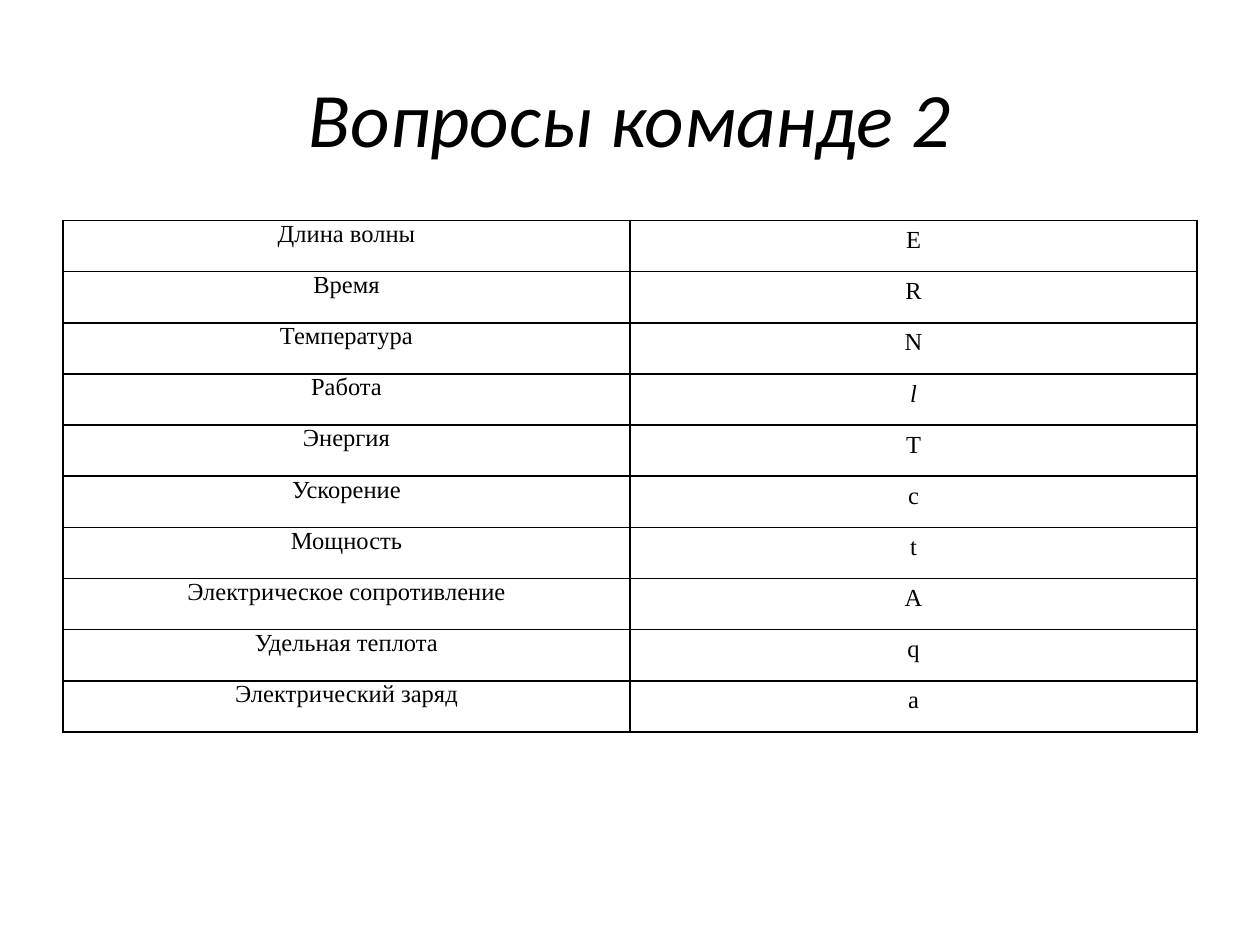
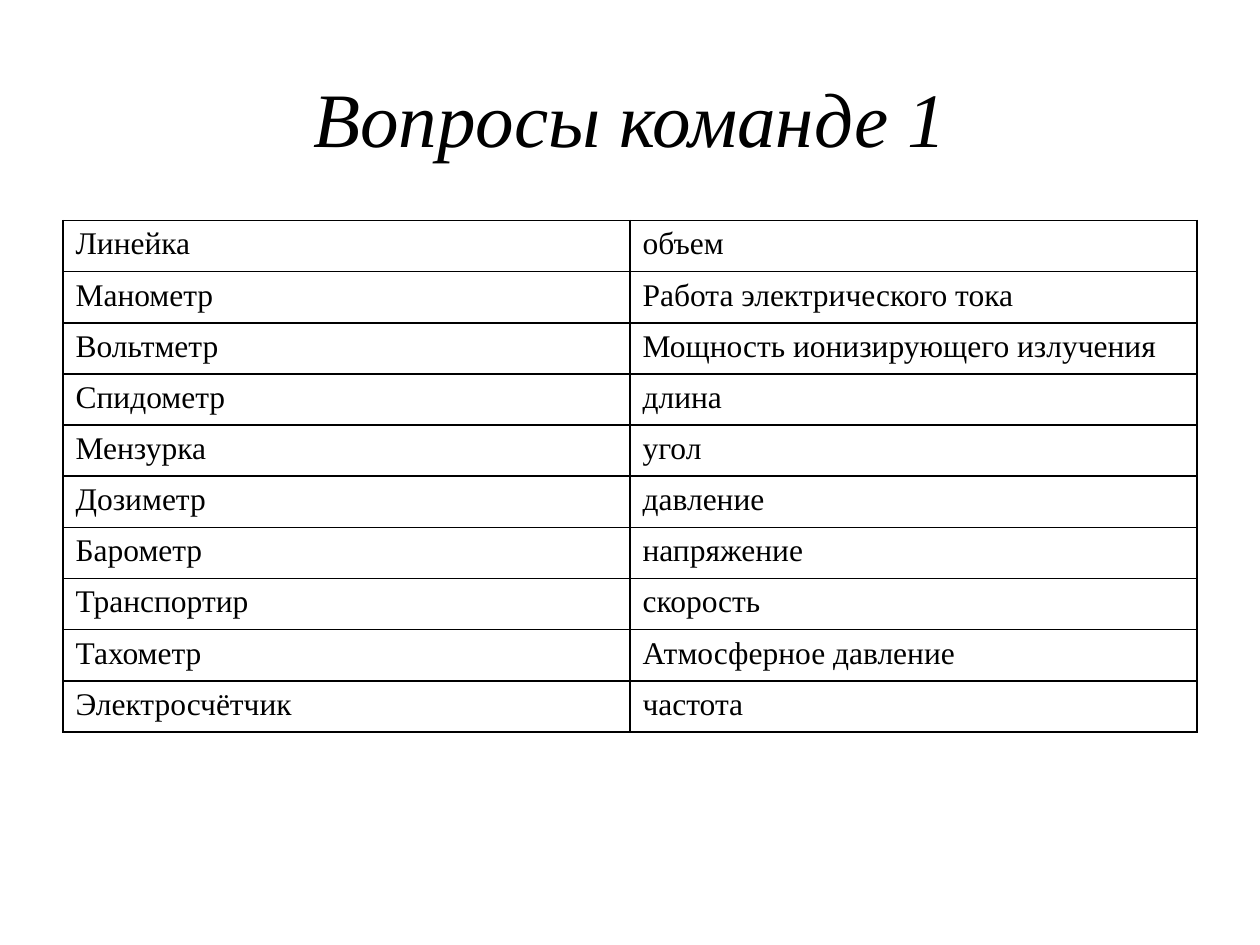
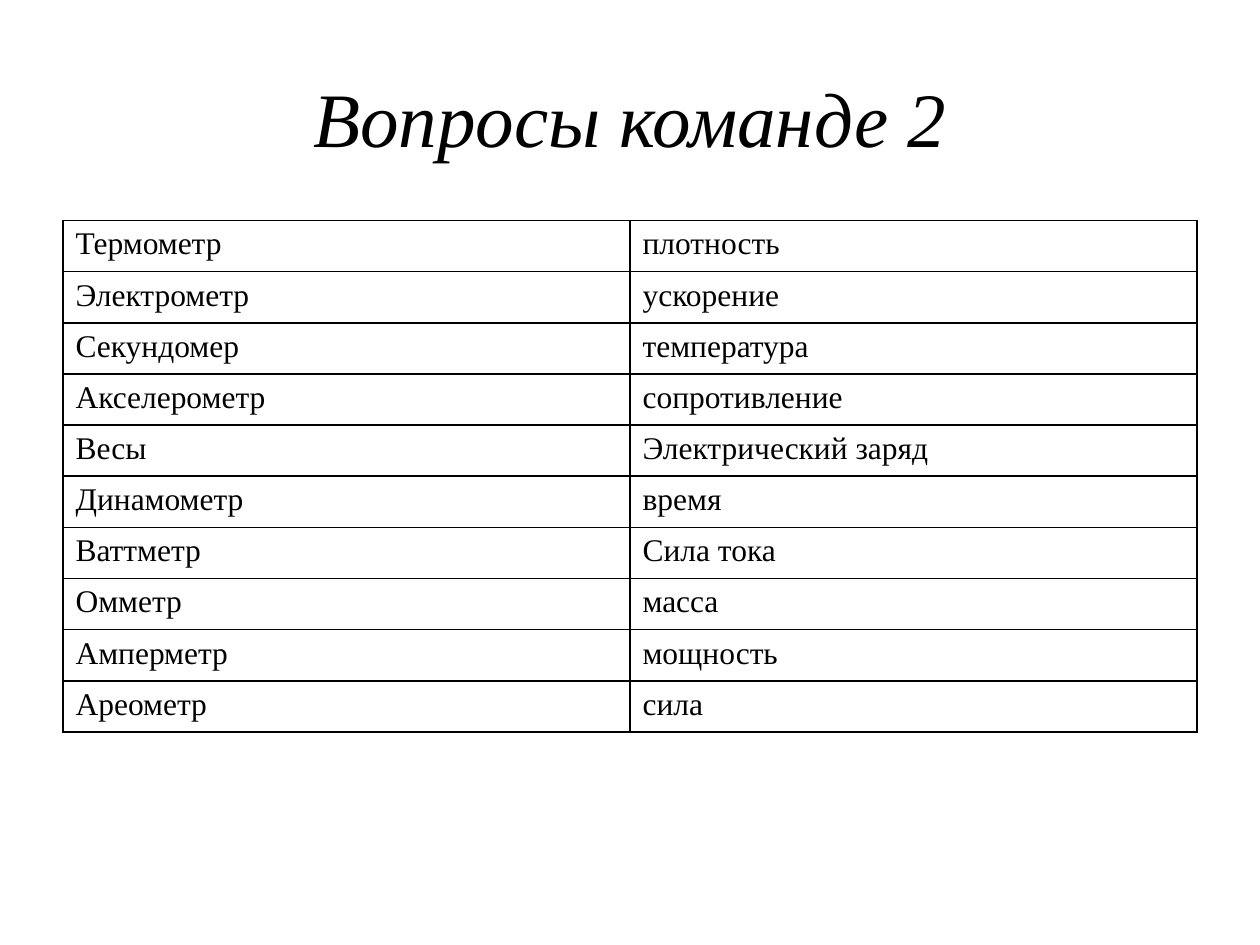
from lxml import etree
from pptx import Presentation
from pptx.dml.color import RGBColor
from pptx.enum.text import MSO_ANCHOR, PP_ALIGN
from pptx.oxml.ns import qn
from pptx.util import Inches, Pt

LEFT, CENTER = PP_ALIGN.LEFT, PP_ALIGN.CENTER
MIDDLE = MSO_ANCHOR.MIDDLE

SANS, SERIF = "Calibri", "Times New Roman"
BLACK = "000000"
TITLE_ONLY_LAYOUT = 5
MARGIN, CONTENT_WIDTH = 0.5, 9
TITLE_TOP, TITLE_HEIGHT, TITLE_SIZE = 0.3, 1.25, 44
TABLE_TOP, TABLE_HEIGHT = 1.75, 4.06
BORDER_WIDTH = Pt(1)

QUANTITIES_AND_SYMBOLS = [
    ("Длина волны", "E"),
    ("Время", "R"),
    ("Температура", "N"),
    ("Работа", "l"),
    ("Энергия", "T"),
    ("Ускорение", "с"),
    ("Мощность", "t"),
    ("Электрическое сопротивление", "А"),
    ("Удельная теплота", "q"),
    ("Электрический заряд", "a"),
]
ITALIC_SYMBOLS = {"l"}

TEAM_1_INSTRUMENTS = [
    ("Линейка", "объем"),
    ("Манометр", "Работа электрического тока"),
    ("Вольтметр", "Мощность ионизирующего излучения"),
    ("Спидометр", "длина"),
    ("Мензурка", "угол"),
    ("Дозиметр", "давление"),
    ("Барометр", "напряжение"),
    ("Транспортир", "скорость"),
    ("Тахометр", "Атмосферное давление"),
    ("Электросчётчик", "частота"),
]

TEAM_2_INSTRUMENTS = [
    ("Термометр", "плотность"),
    ("Электрометр", "ускорение"),
    ("Секундомер", "температура"),
    ("Акселерометр", "сопротивление"),
    ("Весы", "Электрический заряд"),
    ("Динамометр", "время"),
    ("Ваттметр", "Сила тока"),
    ("Омметр", "масса"),
    ("Амперметр", "мощность"),
    ("Ареометр", "сила"),
]

SYMBOL_STYLE = {"size": 14, "alignment": CENTER, "tight_first_column": True}
INSTRUMENT_STYLE = {"size": 18, "alignment": LEFT, "tight_first_column": False}

SLIDES = [
    ("Вопросы команде 2", SANS, QUANTITIES_AND_SYMBOLS, SYMBOL_STYLE),
    ("Вопросы команде 1", SERIF, TEAM_1_INSTRUMENTS, INSTRUMENT_STYLE),
    ("Вопросы команде 2", SERIF, TEAM_2_INSTRUMENTS, INSTRUMENT_STYLE),
]


def color(hex_value):
    return RGBColor.from_string(hex_value)


def write_text(text_frame, text, font_name, size, alignment, italic=False):
    paragraph = text_frame.paragraphs[0]
    paragraph.alignment = alignment
    run = paragraph.add_run()
    run.text = text
    run.font.name = font_name
    run.font.size = Pt(size)
    run.font.italic = italic
    run.font.color.rgb = color(BLACK)


def add_title(slide, text, font_name):
    title = slide.shapes.title
    title.left, title.top = Inches(MARGIN), Inches(TITLE_TOP)
    title.width, title.height = Inches(CONTENT_WIDTH), Inches(TITLE_HEIGHT)
    title.text_frame.vertical_anchor = MIDDLE
    write_text(title.text_frame, text, font_name, TITLE_SIZE, CENTER, italic=True)


def set_borders(cell):
    properties = cell._tc.get_or_add_tcPr()
    for side in ("lnL", "lnR", "lnT", "lnB"):
        line = etree.SubElement(properties, qn(f"a:{side}"), w=str(BORDER_WIDTH))
        fill = etree.SubElement(line, qn("a:solidFill"))
        etree.SubElement(fill, qn("a:srgbClr"), val=BLACK)


def add_pairs_table(slide, pairs, size, alignment, tight_first_column):
    """Add a two-column grid; a tight first column has no top or bottom margin."""
    table = slide.shapes.add_table(
        len(pairs), 2, Inches(MARGIN), Inches(TABLE_TOP),
        Inches(CONTENT_WIDTH), Inches(TABLE_HEIGHT),
    ).table
    table.first_row = table.horz_banding = False
    for row_index, pair in enumerate(pairs):
        for column_index, text in enumerate(pair):
            cell = table.cell(row_index, column_index)
            set_borders(cell)
            cell.fill.background()
            if tight_first_column and column_index == 0:
                cell.margin_left = cell.margin_right = Inches(0.07)
                cell.margin_top = cell.margin_bottom = 0
            write_text(cell.text_frame, text, SERIF, size, alignment,
                       italic=text in ITALIC_SYMBOLS)


def main():
    presentation = Presentation()
    presentation.slide_width, presentation.slide_height = Inches(10), Inches(7.5)
    layout = presentation.slide_layouts[TITLE_ONLY_LAYOUT]
    for title, title_font, pairs, style in SLIDES:
        slide = presentation.slides.add_slide(layout)
        add_title(slide, title, title_font)
        add_pairs_table(slide, pairs, **style)
    presentation.save("out.pptx")


if __name__ == "__main__":
    main()
